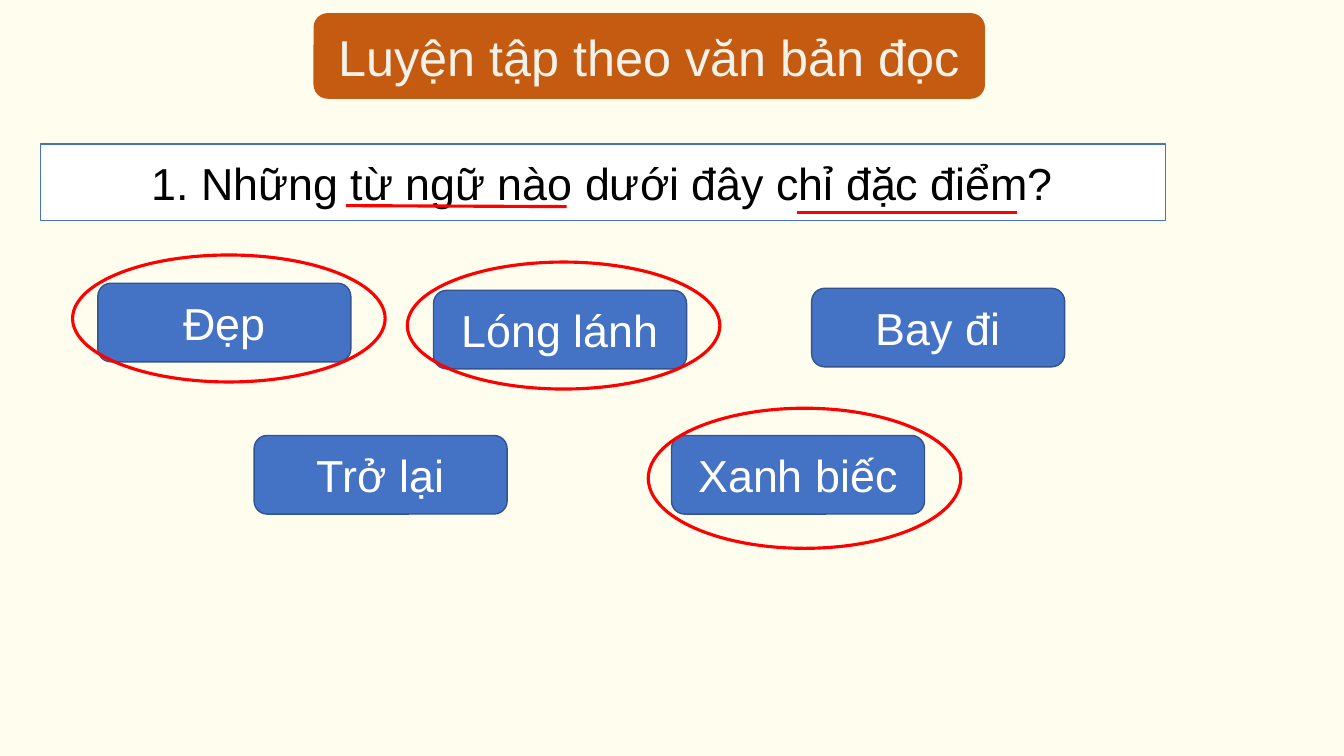
"""Builds a Vietnamese reading exercise slide with word cards and circled answers."""
from lxml import etree
from pptx import Presentation
from pptx.dml.color import RGBColor
from pptx.enum.shapes import MSO_CONNECTOR as Connector, MSO_SHAPE as Shape
from pptx.enum.text import MSO_ANCHOR as Anchor, PP_ALIGN as Align
from pptx.oxml.ns import qn
from pptx.util import Inches, Pt

TITLE = "Luyện tập theo văn bản đọc"
QUESTION = "1. Những từ ngữ nào dưới đây chỉ đặc điểm?"
WORDS = [
    ("Đẹp", 0.97, 2.81),
    ("Lóng lánh", 4.3, 2.88),
    ("Bay đi", 8.05, 2.86),
    ("Trở lại", 2.52, 4.32),
    ("Xanh biếc", 6.66, 4.32),
]
ANSWER_RINGS = [(4.04, 2.6, 1.26), (6.43, 4.05, 1.39), (0.72, 2.53, 1.26)]
UNDERLINES = [(3.43, 2.04, 2.05), (7.9, 2.11, 2.11)]
CARD_WIDTH, CARD_HEIGHT = 2.51, 0.78
RING_WIDTH, UNDERLINE_WIDTH = 3.1, 2.19
MARK_WEIGHT = 2.25
FONT = "Arial"
COLORS = {
    "background": "FFFDEE",
    "title": "C55A11",
    "title_text": "F2F2E9",
    "question": "FFFFFF",
    "question_text": "000000",
    "card": "4472C4",
    "card_edge": "325491",
    "card_text": "FFFFFF",
    "mark": "FF0000",
}


def color(name):
    return RGBColor.from_string(COLORS[name])


def add_figure(slide, kind, box, fill=None, edge=None, weight=1):
    figure = slide.shapes.add_shape(kind, *map(Inches, box))
    figure.shadow.inherit = False
    if fill:
        figure.fill.solid()
        figure.fill.fore_color.rgb = color(fill)
    else:
        figure.fill.background()
    if edge:
        figure.line.color.rgb = color(edge)
        figure.line.width = Pt(weight)
    else:
        figure.line.fill.background()
    return figure


def write(figure, text, ink, size=32):
    frame = figure.text_frame
    frame.word_wrap = True
    frame.vertical_anchor = Anchor.MIDDLE
    line = frame.paragraphs[0]
    line.alignment = Align.CENTER
    run = line.add_run()
    run.text = text
    run.font.name = FONT
    run.font.size = Pt(size)
    run.font.color.rgb = color(ink)


def add_underline(slide, left, start, end):
    ends = (left, start, left + UNDERLINE_WIDTH, end)
    underline = slide.shapes.add_connector(Connector.STRAIGHT, *map(Inches, ends))
    underline.line.color.rgb = color("mark")
    underline.line.width = Pt(MARK_WEIGHT)
    etree.SubElement(underline._element.spPr, qn("a:effectLst"))


def main():
    deck = Presentation()
    deck.slide_width, deck.slide_height = Inches(13.33), Inches(7.5)
    slide = deck.slides.add_slide(deck.slide_layouts[6])
    slide.background.fill.solid()
    slide.background.fill.fore_color.rgb = color("background")

    question = add_figure(slide, Shape.RECTANGLE, (0.4, 1.43, 11.16, 0.76), "question", "card")
    write(question, QUESTION, "question_text")
    for word, left, top in WORDS:
        box = (left, top, CARD_WIDTH, CARD_HEIGHT)
        card = add_figure(slide, Shape.ROUNDED_RECTANGLE, box, "card", "card_edge")
        write(card, word, "card_text")
    title = add_figure(slide, Shape.ROUNDED_RECTANGLE, (3.11, 0.13, 6.66, 0.85), "title")
    write(title, TITLE, "title_text", 36)

    for underline in UNDERLINES:
        add_underline(slide, *underline)
    for left, top, height in ANSWER_RINGS:
        box = (left, top, RING_WIDTH, height)
        add_figure(slide, Shape.OVAL, box, edge="mark", weight=MARK_WEIGHT)
    deck.save("out.pptx")


if __name__ == "__main__":
    main()
